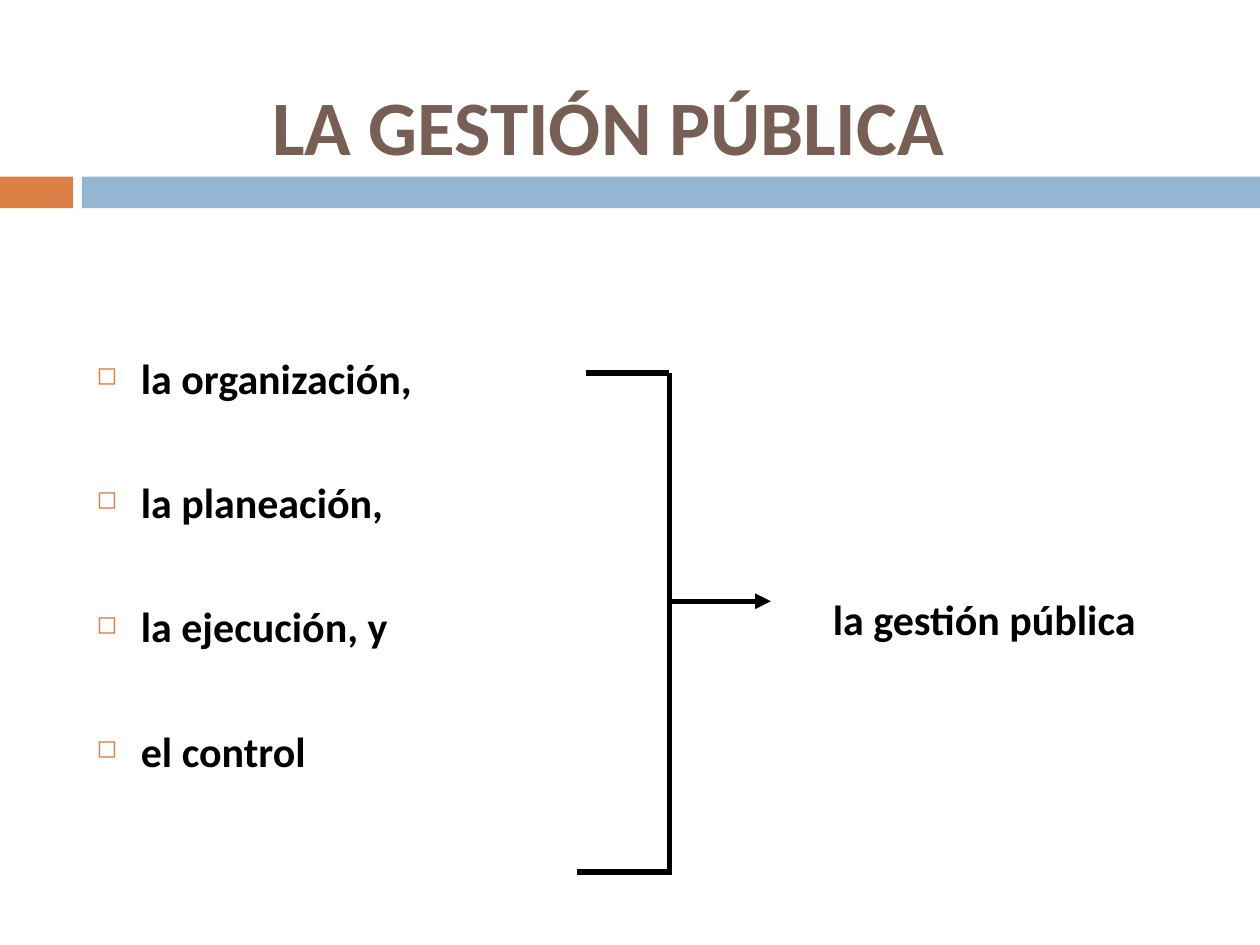
from lxml.etree import SubElement
from pptx import Presentation
from pptx.dml.color import RGBColor
from pptx.enum.shapes import MSO_CONNECTOR as Connector, MSO_SHAPE as Shape
from pptx.enum.text import MSO_ANCHOR as Anchor, MSO_AUTO_SIZE as AutoSize, PP_ALIGN as Align
from pptx.oxml.ns import qn
from pptx.util import Cm, Pt

COLORS = {"title": "775F55", "accent": "DD8047", "band": "94B6D2", "ink": "000000"}
FONT = "Calibri"

TITLE = "LA GESTIÓN PÚBLICA"
FUNCTIONS = ["la organización,", "la planeación,", "la ejecución, y", "el control"]
RESULT = "la gestión pública"

BAND_TOP, BAND_HEIGHT = 3.56, 0.64
BANDS = [(0, 1.47, "accent"), (1.65, 23.75, "band")]

SPINE, TOP, MIDDLE, BOTTOM = 13.49, 7.52, 12.12, 17.58
BRACKET = [
    ((11.81, TOP), (SPINE, TOP)),
    ((SPINE, TOP), (SPINE, BOTTOM)),
    ((SPINE + 0.05, BOTTOM), (11.63, BOTTOM)),
]
ARROW = ((SPINE + 0.05, MIDDLE), (15.54, MIDDLE))


def color(key):
    return RGBColor.from_string(COLORS[key])


def write(box, text, *, size=24, ink="ink", align=Align.LEFT, anchor=Anchor.TOP,
          left=0.25, top=0.13, gap=0, bullet=None):
    frame = box.text_frame
    frame.word_wrap = True
    frame.auto_size = AutoSize.NONE
    frame.vertical_anchor = anchor
    frame.margin_left, frame.margin_top = Cm(left), Cm(top)
    frame.text = text
    for index, line in enumerate(frame.paragraphs):
        line.alignment = align
        line.space_before = Pt(gap if index else 0)
        font = line.runs[0].font
        font.name, font.size, font.bold = FONT, Pt(size), True
        font.color.rgb = color(ink)
        if bullet:
            props = line._p.get_or_add_pPr()
            props.set("marL", str(Cm(0.89)))
            props.set("indent", str(-Cm(0.89)))
            tint = SubElement(props, qn("a:buClr"))
            SubElement(tint, qn("a:srgbClr")).set("val", COLORS["accent"])
            SubElement(props, qn("a:buSzPct")).set("val", "60000")
            SubElement(props, qn("a:buChar")).set("char", bullet)


def draw_line(slide, start, end, arrow=False):
    stroke = slide.shapes.add_connector(
        Connector.STRAIGHT, *(Cm(value) for value in start + end))
    stroke.line.color.rgb = color("ink")
    stroke.line.width = Pt(3)
    if arrow:
        SubElement(stroke.line._get_or_add_ln(), qn("a:tailEnd")).set("type", "triangle")
    SubElement(stroke._element.spPr, qn("a:effectLst"))


def main():
    deck = Presentation()
    deck.slide_width, deck.slide_height = Cm(25.4), Cm(19.05)
    slide = deck.slides.add_slide(deck.slide_layouts[5])

    for left, width, fill in BANDS:
        band = slide.shapes.add_shape(
            Shape.RECTANGLE, Cm(left), Cm(BAND_TOP), Cm(width), Cm(BAND_HEIGHT))
        band.shadow.inherit = False
        band.fill.solid()
        band.fill.fore_color.rgb = color(fill)
        band.line.fill.background()

    heading = slide.shapes.title
    heading.left, heading.top = Cm(2.11), Cm(0.91)
    heading.width, heading.height = Cm(20.32), Cm(3.2)
    write(heading, TITLE, size=44, ink="title", align=Align.CENTER, anchor=Anchor.MIDDLE)

    functions = slide.shapes.add_textbox(Cm(1.7), Cm(4.42), Cm(10.8), Cm(12.7))
    write(functions, "\n".join(FUNCTIONS), top=2.68, gap=42.3, bullet="◻")

    result = slide.shapes.add_textbox(Cm(12.9), Cm(5.51), Cm(12.5), Cm(11.43))
    write(result, RESULT, left=3.89, top=6.46)

    for start, end in BRACKET:
        draw_line(slide, start, end)
    draw_line(slide, *ARROW, arrow=True)

    deck.save("out.pptx")


if __name__ == "__main__":
    main()
